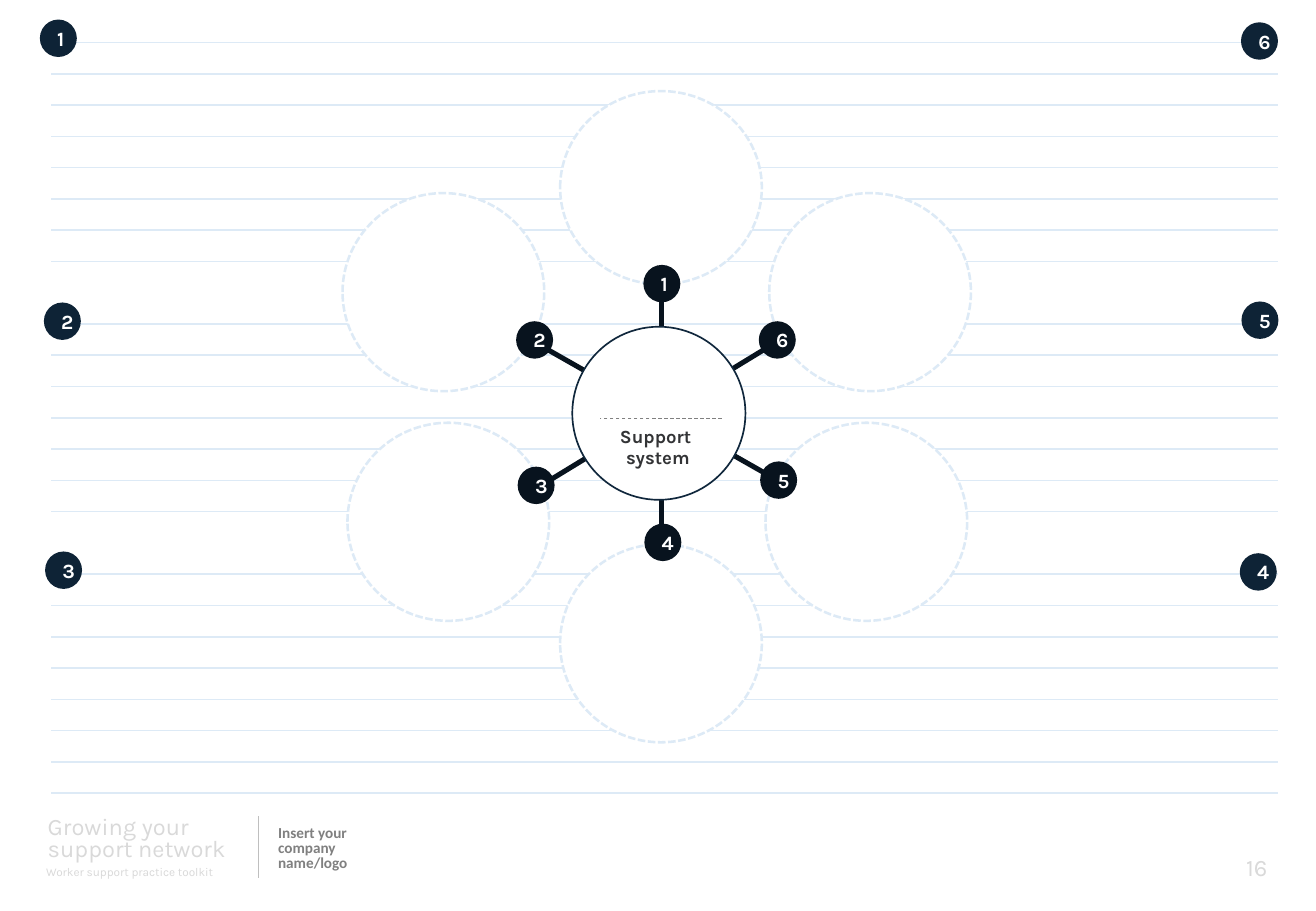
"""Build the worksheet page with six support circles around a centre."""
from lxml import etree
from pptx import Presentation
from pptx.dml.color import RGBColor
from pptx.enum.dml import MSO_LINE
from pptx.enum.shapes import MSO_CONNECTOR, MSO_SHAPE
from pptx.enum.text import MSO_ANCHOR, MSO_AUTO_SIZE, PP_ALIGN
from pptx.oxml.ns import qn
from pptx.util import Pt

STRAIGHT = MSO_CONNECTOR.STRAIGHT
OVAL = MSO_SHAPE.OVAL
LEFT, CENTER, RIGHT = PP_ALIGN.LEFT, PP_ALIGN.CENTER, PP_ALIGN.RIGHT
COLORS = {
    "rule": "DDEAF6", "navy": "0E2336", "dark": "08131E", "outline": "10273C",
    "white": "FFFFFF", "label": "333436", "gray": "808080",
    "divider": "BFBFBF", "footer": "D9D9D9",
}
COLORS = {name: RGBColor.from_string(value) for name, value in COLORS.items()}

deck = Presentation()
deck.slide_width, deck.slide_height = Pt(779.76), Pt(540)
page = deck.slides.add_slide(deck.slide_layouts[6])


def add_line(x1, y1, x2, y2, color, width, dash=None):
    line = page.shapes.add_connector(STRAIGHT, Pt(x1), Pt(y1), Pt(x2), Pt(y2))
    line.line.color.rgb = COLORS[color]
    line.line.width = Pt(width)
    if dash:
        line.line.dash_style = dash
    etree.SubElement(line._element.spPr, qn("a:effectLst"))


def add_text(text, area, size, color, align=LEFT, font="Karla", bold=False,
             spacing=None, insets=(7.2, 3.6, 7.2, 3.6)):
    box = page.shapes.add_textbox(*map(Pt, area))
    frame = box.text_frame
    frame.text = text
    frame.word_wrap = True
    frame.auto_size = MSO_AUTO_SIZE.SHAPE_TO_FIT_TEXT
    (frame.margin_left, frame.margin_top,
     frame.margin_right, frame.margin_bottom) = map(Pt, insets)
    para = frame.paragraphs[0]
    para.alignment = align
    if spacing:
        para.line_spacing = Pt(spacing)
    for span in para.runs:
        span.font.name = font
        span.font.size = Pt(size)
        span.font.bold = bold
        span.font.color.rgb = COLORS[color]
    return para


section_gaps = (8, 16)
for row in range(25):
    if row not in section_gaps:
        y = 25.2 + row * 18.54
        add_line(30.3, y, 757.4, y, "rule", 1)

add_line(153.2, 483.8, 153.2, 520.6, "divider", 0.5)
add_text("Insert your company name/logo", (157.7, 486, 80.6, 34.6), 9, "gray",
         font="Calibri", bold=True, spacing=9)
add_text("Growing your support network", (28.3, 485.3, 121.7, 30.2), 14, "footer",
         spacing=13, insets=(0, 0, 2.9, 3.6))
add_text("Worker support practice toolkit", (27.4, 509, 122.4, 15.8), 7, "footer",
         insets=(0, 3.6, 0, 3.6))
add_text("16", (695.5, 501.8, 62.6, 24.5), 14, "footer", align=RIGHT)

for spoke in [(460.1, 284.4, 319.7, 204.5), (391.9, 175.7, 391.9, 313.9),
              (457.2, 204.5, 322.6, 286.6)]:
    add_line(*spoke, "dark", 3)

circles = [
    (339.1, 193.7, 102.6, 102.6, "outline", 1, MSO_LINE.SOLID),
]
for left, top, height in [(453.6, 250.6, 117.4), (203, 114.5, 117.4),
                          (331.9, 322.6, 117.4), (455.8, 114.5, 117.4),
                          (331.9, 54, 114.5), (205.9, 250.6, 117.4)]:
    circles.append((left, top, 119.5, height, "rule", 1.5, MSO_LINE.SQUARE_DOT))
for left, top, width, height, color, weight, dash in circles:
    circle = page.shapes.add_shape(OVAL, Pt(left), Pt(top), Pt(width), Pt(height))
    circle.shadow.inherit = False
    circle.fill.solid()
    circle.fill.fore_color.rgb = COLORS["white"]
    circle.line.color.rgb = COLORS[color]
    circle.line.width = Pt(weight)
    circle.line.dash_style = dash

badges = {
    "navy": [(23.6, 11.6), (26, 179.3), (26.7, 326.9),
             (734.6, 327.9), (735.6, 178.7), (735.3, 13.2)],
    "dark": [(381.2, 157), (305.8, 190.4), (306.7, 276.6),
             (381.8, 310.4), (450.4, 273.5), (449.6, 190.4)],
}
for color, corners in badges.items():
    for number, (left, top) in enumerate(corners, 1):
        badge = page.shapes.add_shape(OVAL, Pt(left), Pt(top), Pt(21.9), Pt(22.2))
        badge.shadow.inherit = False
        badge.fill.solid()
        badge.fill.fore_color.rgb = COLORS[color]
        badge.line.fill.background()
        frame = badge.text_frame
        frame.text = str(number)
        frame.vertical_anchor = MSO_ANCHOR.MIDDLE
        para = frame.paragraphs[0]
        para.alignment = CENTER
        span = para.runs[0]
        span.font.name = "Karla"
        span.font.size = Pt(12)
        span.font.bold = True
        span.font.color.rgb = COLORS["white"]

label = add_text("Support \vsystem", (304.6, 249.8, 134.6, 31.7), 11, "label",
                 align=CENTER, bold=True, spacing=12)
label.level = 1
label.space_after = Pt(6)
label_properties = label._p.get_or_add_pPr()
label_properties.set("marL", str(Pt(36)))
label_properties.set("indent", "0")
add_line(427.7, 247.8, 355.7, 247.8, "gray", 0.5, MSO_LINE.DASH)

deck.save("out.pptx")
